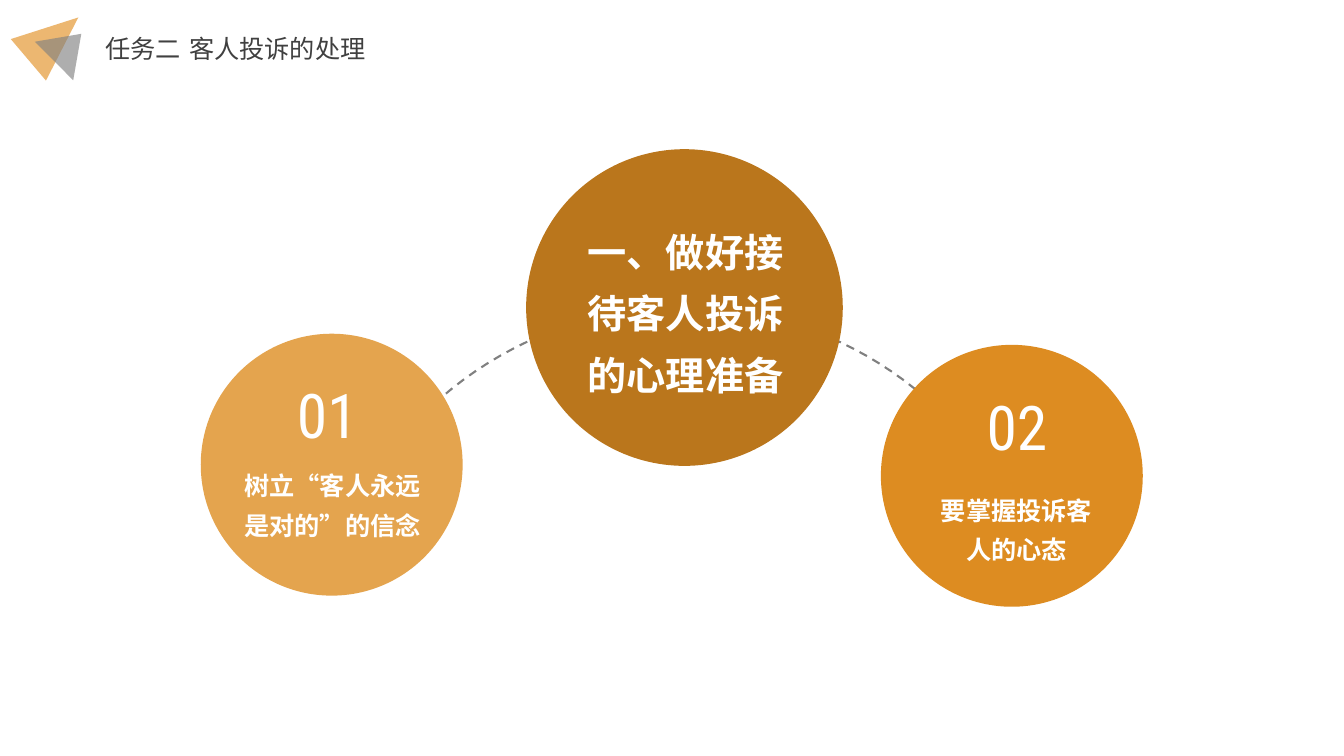
from dataclasses import dataclass
from math import cos, radians, sin

from lxml.etree import SubElement
from pptx import Presentation
from pptx.dml.color import RGBColor
from pptx.enum.dml import MSO_LINE
from pptx.enum.shapes import MSO_SHAPE as Shape
from pptx.enum.text import MSO_AUTO_SIZE as AutoSize, PP_ALIGN as Align
from pptx.oxml.ns import qn
from pptx.util import Cm, Pt


@dataclass(frozen=True)
class Theme:
    accent: str = "E18E1F"
    grey: str = "808080"
    title: str = "404040"
    white: str = "FFFFFF"
    light: str = "E4A44E"
    dark: str = "BA761C"
    mid: str = "DD8C21"
    title_font: str = "DejaVu Sans"
    body_font: str = "Noto Sans CJK SC"
    number_font: str = "Roboto Condensed"
    body_size: int = 18
    main_size: int = 28
    number_size: int = 44


THEME = Theme()


def add_filled(s, kind, box, color, rotation=0, opacity=100):
    sp = s.shapes.add_shape(kind, *map(Cm, box))
    sp.shadow.inherit = False
    sp.rotation = rotation
    sp.fill.solid()
    sp.fill.fore_color.rgb = RGBColor.from_string(color)
    sp.line.fill.background()
    if opacity < 100:
        clr = sp.fill._xPr.find(".//" + qn("a:srgbClr"))
        SubElement(clr, qn("a:alpha"), val=str(opacity * 1000))


def add_circle(s, cx, cy, diameter, color):
    box = (cx - diameter / 2, cy - diameter / 2, diameter, diameter)
    add_filled(s, Shape.OVAL, box, color)


def add_text(s, text, box, size=THEME.body_size, font=THEME.body_font,
             color=THEME.white, bold=False, align=Align.CENTER, spacing=None):
    sp = s.shapes.add_textbox(*map(Cm, box))
    tf = sp.text_frame
    tf.word_wrap = True
    tf.auto_size = AutoSize.SHAPE_TO_FIT_TEXT
    p = tf.paragraphs[0]
    p.alignment = align
    p.line_spacing = spacing
    r = p.add_run()
    r.text = text
    r.font.size = Pt(size)
    r.font.bold = bold
    r.font.name = font
    r.font.color.rgb = RGBColor.from_string(color)
    rpr = r._r.get_or_add_rPr()
    rpr.set("lang", "zh-CN")
    SubElement(rpr, qn("a:ea"), typeface=font)


def add_dashed_arc(s, cx, cy, radius, half_angle, steps=60):
    angles = [radians(half_angle * (1 - 2 * i / steps)) for i in range(steps + 1)]
    points = [(Cm(cx + radius * sin(a)), Cm(cy - radius * cos(a))) for a in angles]
    builder = s.shapes.build_freeform(*points[0])
    builder.add_line_segments(points[1:], close=False)
    sp = builder.convert_to_shape()
    sp.shadow.inherit = False
    sp.fill.background()
    sp.line.color.rgb = RGBColor.from_string(THEME.grey)
    sp.line.width = Pt(1.5)
    sp.line.dash_style = MSO_LINE.DASH


def add_header(s, title):
    add_filled(s, Shape.ISOSCELES_TRIANGLE, (0.66, 0.15, 1.37, 1.65),
               THEME.accent, rotation=49.7, opacity=63)
    add_filled(s, Shape.ISOSCELES_TRIANGLE, (1.02, 0.71, 1.37, 0.97),
               THEME.grey, rotation=45.1, opacity=63)
    add_text(s, title, (2.41, 0.71, 19.81, 1.02), font=THEME.title_font,
             color=THEME.title, align=Align.LEFT)


def add_point(s, number, text, center, color, number_at, text_box):
    add_circle(s, *center, 6.6, color)
    add_text(s, text, text_box, bold=True, spacing=1.3)
    add_text(s, number, (*number_at, 3.2, 1.65), size=THEME.number_size,
             font=THEME.number_font)


def main():
    prs = Presentation()
    prs.slide_width, prs.slide_height = Cm(33.87), Cm(19.05)
    s = prs.slides.add_slide(prs.slide_layouts[6])

    add_header(s, "任务二 客人投诉的处理")
    add_dashed_arc(s, 17.22, 17.04, 9.3, half_angle=68.7)
    add_point(s, "01", "树立“客人永远是对的”的信念", (8.36, 11.71), THEME.light,
              number_at=(6.65, 9.37), text_box=(5.61, 11.51, 5.54, 2.26))
    add_circle(s, 17.25, 7.75, 7.98, THEME.dark)
    add_text(s, "一、做好接待客人投诉的心理准备", (14.25, 5.28, 6.05, 4.93),
             size=THEME.main_size, bold=True, spacing=1.3)
    add_point(s, "02", "要掌握投诉客人的心态", (25.5, 11.99), THEME.mid,
              number_at=(24.03, 9.68), text_box=(23.32, 12.12, 4.6, 2.26))

    prs.save("out.pptx")


if __name__ == "__main__":
    main()
